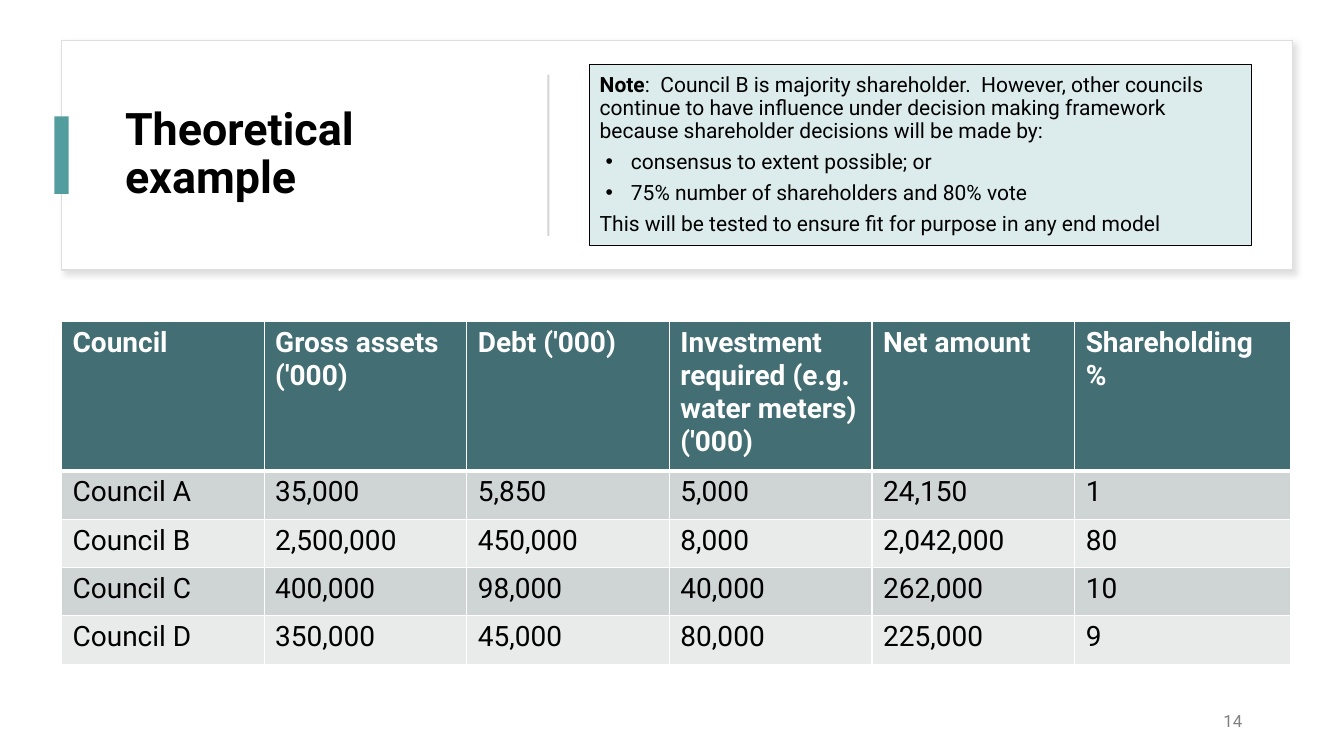
from lxml import etree
from pptx import Presentation
from pptx.dml.color import RGBColor
from pptx.enum.shapes import MSO_SHAPE
from pptx.enum.text import MSO_ANCHOR, PP_ALIGN
from pptx.oxml import parse_xml
from pptx.oxml.ns import qn
from pptx.util import Inches, Pt

RECTANGLE = MSO_SHAPE.RECTANGLE
MIDDLE = MSO_ANCHOR.MIDDLE
LEFT, RIGHT = PP_ALIGN.LEFT, PP_ALIGN.RIGHT

FONT = "Roboto"
BLACK = RGBColor(0x00, 0x00, 0x00)
WHITE = RGBColor(0xFF, 0xFF, 0xFF)
CARD_LINE = RGBColor(0xDE, 0xDE, 0xDE)
SHADOW = RGBColor(0xC5, 0xC3, 0xC3)
ACCENT = RGBColor(0x54, 0x9D, 0x9E)
DIVIDER = RGBColor(0xD5, 0xD5, 0xD5)
NOTE_FILL = RGBColor(0xDC, 0xEC, 0xEC)
GREY = RGBColor(0x80, 0x80, 0x80)
HEADER_FILL = RGBColor(0x43, 0x6E, 0x73)
BANDS = (RGBColor(0xCF, 0xD5, 0xD5), RGBColor(0xE9, 0xEB, 0xEB))

DRAWING_NS = "http://schemas.openxmlformats.org/drawingml/2006/main"

# Shared frame of the header card and the table
CONTENT_LEFT, CONTENT_WIDTH = 0.61, 12.21
CARD_TOP, CARD_HEIGHT = 0.4, 2.28
CARD_MIDDLE = CARD_TOP + CARD_HEIGHT / 2
BOX_HEIGHT = 1.8
TABLE_TOP = 3.19
COLUMN_WIDTHS = [2.01] * 5 + [2.14]
ROW_HEIGHTS = [1.48] + [0.48] * 4

NOTE_INTRO = (
    ":  Council B is majority shareholder.  However, other councils continue to "
    "have influence under decision making framework because shareholder "
    "decisions will be made by:"
)
NOTE_BULLETS = ("consensus to extent possible; or",
                "75% number of shareholders and 80% vote")
NOTE_END = "This will be tested to ensure fit for purpose in any end model"

TABLE_ROWS = (
    ("Council", "Gross assets ('000)", "Debt ('000)",
     "Investment required (e.g. water meters)\n('000)", "Net amount",
     "Shareholding %"),
    ("Council A", "35,000", "5,850", "5,000", "24,150", "1"),
    ("Council B", "2,500,000", "450,000", "8,000", "2,042,000", "80"),
    ("Council C", "400,000", "98,000", "40,000", "262,000", "10"),
    ("Council D", "350,000", "45,000", "80,000", "225,000", "9"),
)


def centred_on_card(left, width, height):
    """Box in inches, centred vertically on the header card."""
    return left, CARD_MIDDLE - height / 2, width, height


def place(shape, box):
    shape.left, shape.top, shape.width, shape.height = map(Inches, box)


def write(paragraph, text, size=15, color=BLACK, bold=False, align=LEFT,
          line_spacing=None, space_after=None):
    run = paragraph.add_run()
    run.text = text
    run.font.name = FONT
    run.font.size = Pt(size)
    run.font.color.rgb = color
    run.font.bold = bold
    paragraph.alignment = align
    if line_spacing is not None:
        paragraph.line_spacing = line_spacing
    if space_after is not None:
        paragraph.space_after = Pt(space_after)


def add_bullet(paragraph):
    properties = paragraph._p.get_or_add_pPr()
    properties.set("marL", str(Inches(0.31)))
    properties.set("indent", str(Inches(-0.25)))
    etree.SubElement(properties, qn("a:buFont"), typeface="Arial")
    etree.SubElement(properties, qn("a:buChar"), char="•")


def add_rectangle(slide, box, fill, line=None, line_width=1):
    shape = slide.shapes.add_shape(RECTANGLE, *map(Inches, box))
    shape.shadow.inherit = False
    shape.fill.solid()
    shape.fill.fore_color.rgb = fill
    if line is None:
        shape.line.fill.background()
    else:
        shape.line.color.rgb = line
        shape.line.width = Pt(line_width)
    return shape


def add_soft_shadow(shape):
    effects = shape._element.spPr.find(qn("a:effectLst"))
    effects.append(parse_xml(
        f'<a:outerShdw xmlns:a="{DRAWING_NS}" blurRad="{Pt(4)}" dist="{Pt(3)}" '
        f'dir="2700000" algn="tl" rotWithShape="0"><a:srgbClr val="{SHADOW}">'
        f'<a:alpha val="50000"/></a:srgbClr></a:outerShdw>'))


def set_borders(cell, top, bottom):
    """White cell borders; top and bottom widths in points."""
    properties = cell._tc.get_or_add_tcPr()
    widths = (("lnL", 1), ("lnR", 1), ("lnT", top), ("lnB", bottom))
    for position, (side, width) in enumerate(widths):
        properties.insert(position, parse_xml(
            f'<a:{side} xmlns:a="{DRAWING_NS}" w="{Pt(width)}"><a:solidFill>'
            f'<a:srgbClr val="{WHITE}"/></a:solidFill></a:{side}>'))


def add_title(slide, card):
    title = slide.shapes.title
    place(title, centred_on_card(1.14, 3.89, BOX_HEIGHT))
    title.text_frame.word_wrap = True
    title.text_frame.vertical_anchor = MIDDLE
    write(title.text_frame.paragraphs[0], "Theoretical example", size=32,
          bold=True, line_spacing=0.9)
    card._element.addnext(title._element)  # bring the title above the card


def add_note(slide):
    note = add_rectangle(slide, centred_on_card(5.85, 6.56, BOX_HEIGHT),
                         NOTE_FILL, BLACK, 0.75)
    frame = note.text_frame
    frame.word_wrap = True
    frame.vertical_anchor = MIDDLE
    spacing = {"line_spacing": 0.9, "space_after": 6}
    intro = frame.paragraphs[0]
    write(intro, "Note", bold=True, **spacing)
    write(intro, NOTE_INTRO, **spacing)
    for text in NOTE_BULLETS:
        paragraph = frame.add_paragraph()
        write(paragraph, text, **spacing)
        add_bullet(paragraph)
    write(frame.add_paragraph(), NOTE_END, **spacing)


def add_page_number(slide):
    box = slide.shapes.add_textbox(*map(Inches, (9.42, 6.95, 3, 0.4)))
    box.text_frame.word_wrap = True
    box.text_frame.vertical_anchor = MIDDLE
    write(box.text_frame.paragraphs[0], "14", size=12, color=GREY, align=RIGHT,
          space_after=6)


def fill_cell(cell, text, row):
    header = row == 0
    cell.margin_left = cell.margin_right = Inches(0.11)
    cell.margin_top = cell.margin_bottom = Inches(0.05)
    cell.fill.solid()
    cell.fill.fore_color.rgb = HEADER_FILL if header else BANDS[(row - 1) % 2]
    set_borders(cell, top=3 if row == 1 else 1, bottom=3 if header else 1)
    frame = cell.text_frame
    for index, line in enumerate(text.split("\n")):
        paragraph = frame.add_paragraph() if index else frame.paragraphs[0]
        write(paragraph, line, size=20, color=WHITE if header else BLACK,
              bold=header)


def add_council_table(slide):
    box = (CONTENT_LEFT, TABLE_TOP, CONTENT_WIDTH, sum(ROW_HEIGHTS))
    table = slide.shapes.add_table(len(ROW_HEIGHTS), len(COLUMN_WIDTHS),
                                   *map(Inches, box)).table
    for column, width in zip(table.columns, COLUMN_WIDTHS):
        column.width = Inches(width)
    for row, height in zip(table.rows, ROW_HEIGHTS):
        row.height = Inches(height)
    for row, texts in enumerate(TABLE_ROWS):
        for column, text in enumerate(texts):
            fill_cell(table.cell(row, column), text, row)


def main():
    presentation = Presentation()
    presentation.slide_width = Inches(13.33)
    presentation.slide_height = Inches(7.5)
    title_only = presentation.slide_layouts[5]
    slide = presentation.slides.add_slide(title_only)

    # Header card with title, accent, divider and note
    card = add_rectangle(
        slide, (CONTENT_LEFT, CARD_TOP, CONTENT_WIDTH, CARD_HEIGHT),
        WHITE, CARD_LINE)
    add_soft_shadow(card)
    add_title(slide, card)
    add_rectangle(slide, centred_on_card(0.54, 0.14, 0.77), ACCENT)
    add_rectangle(slide, centred_on_card(5.43, 0.02, 1.6), DIVIDER)
    add_note(slide)

    # Page number and shareholding table
    add_page_number(slide)
    add_council_table(slide)

    presentation.save("out.pptx")


if __name__ == "__main__":
    main()
